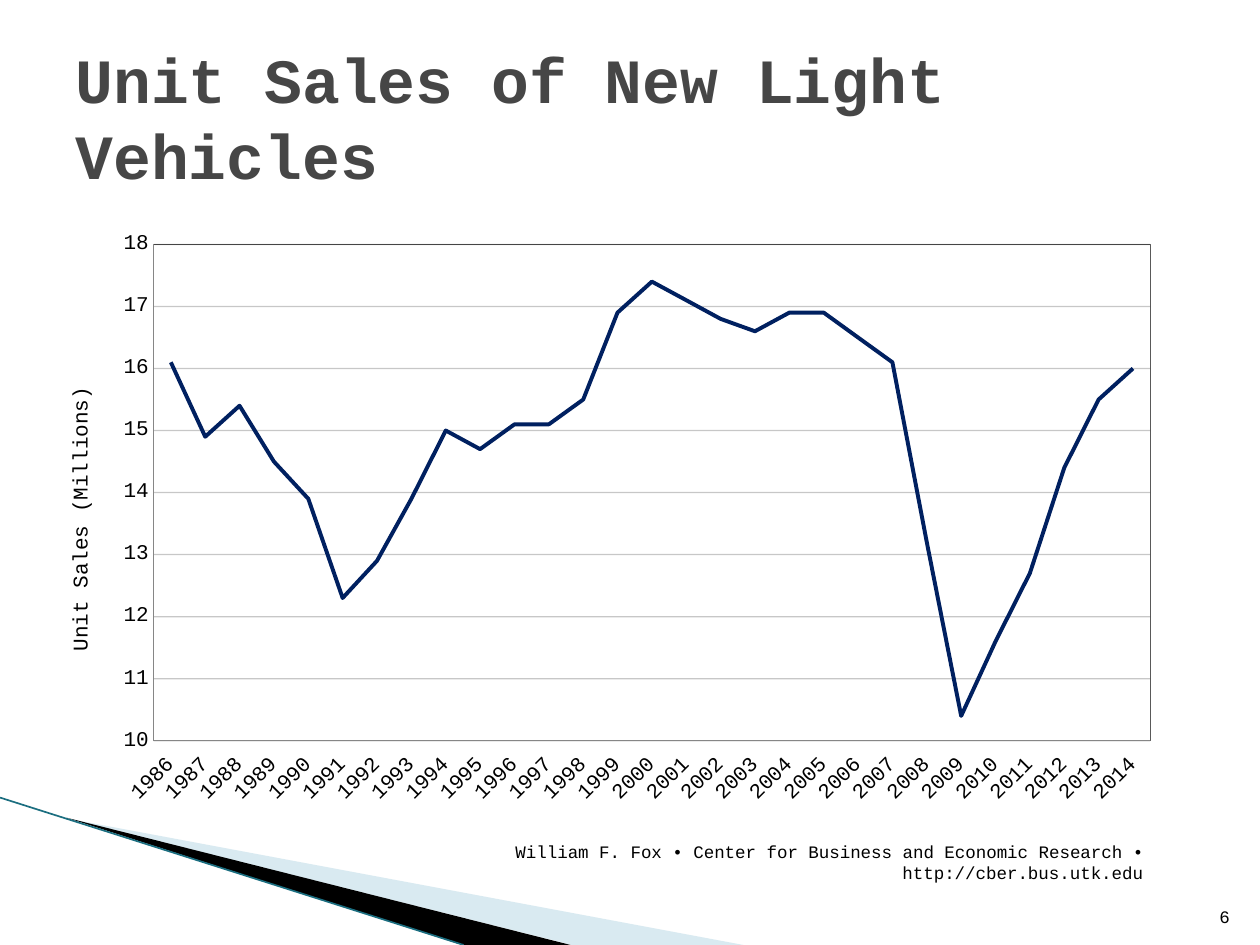
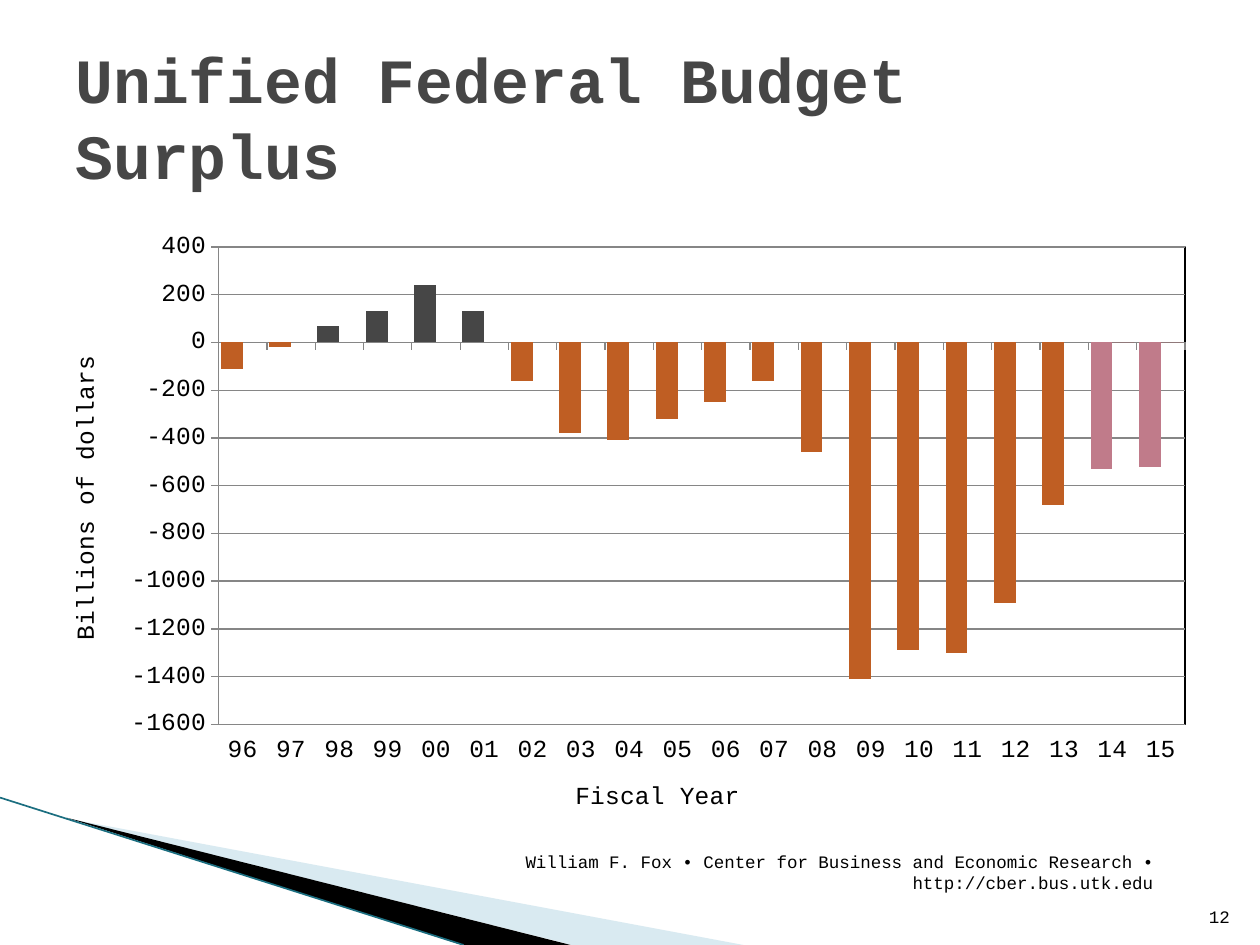
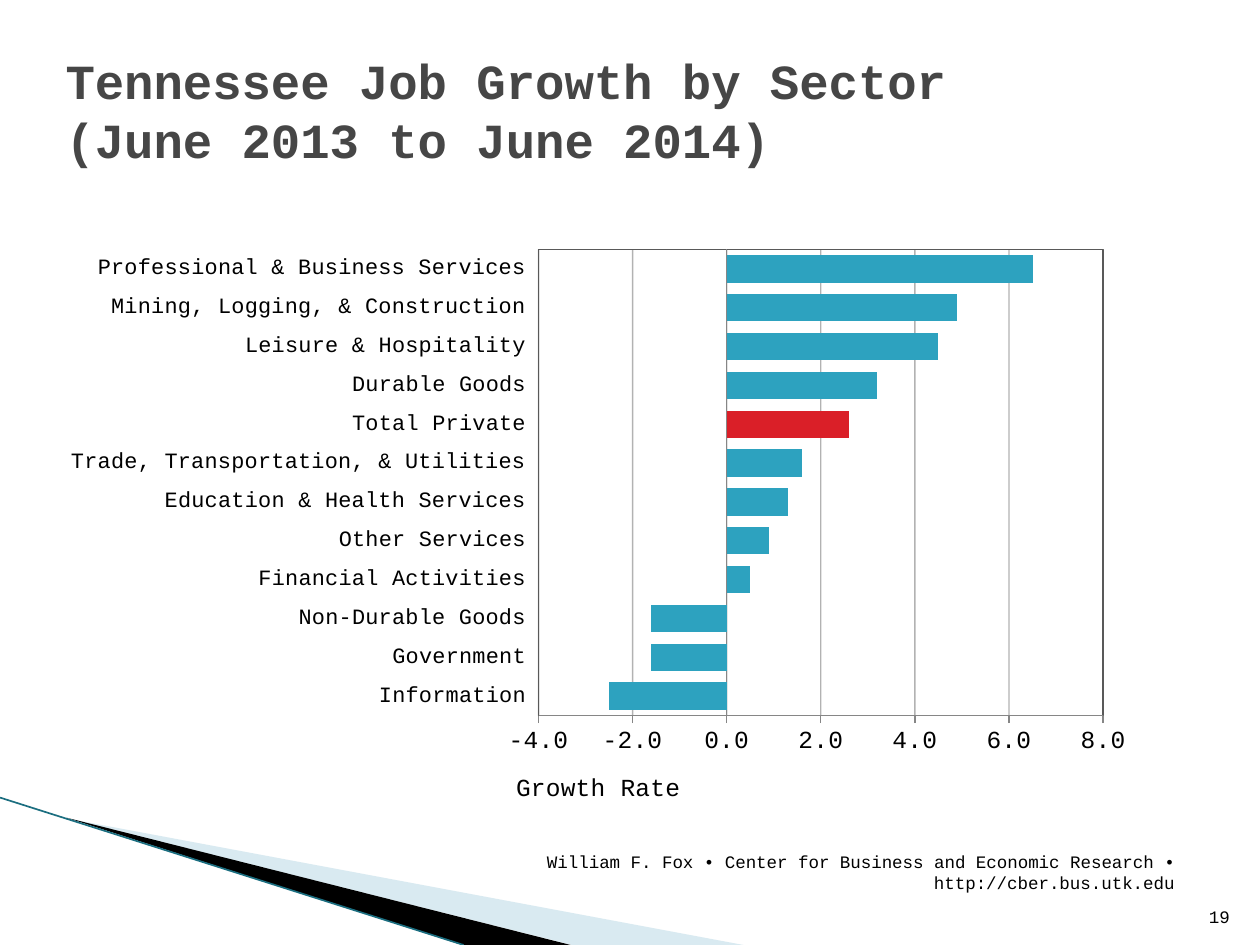
import pptx
import pptx.chart.data
import pptx.dml.color
import pptx.enum.chart
import pptx.enum.shapes
import pptx.enum.text
import pptx.oxml
import pptx.oxml.ns
import pptx.util

COLORS = {
    "text": "000000", "title": "464646", "pale": "A0CBDC", "edge": "1B6E80",
    "axis": "868686", "border": "595959", "navy": "002060", "deficit": "BF5E23",
    "surplus": "464646", "forecast": "C07B8A", "red": "DA1F28", "teal": "2DA2BF",
}
FONT = "Courier New"
CREDIT = "William F. Fox • Center for Business and Economic Research • http://cber.bus.utk.edu"
COLUMNS, ROWS = 100, 75
KINDS = pptx.enum.chart.XL_CHART_TYPE
TICKS = pptx.enum.chart.XL_TICK_MARK
ALIGN = pptx.enum.text.PP_ALIGN
ANCHOR = pptx.enum.text.MSO_ANCHOR


def rgb(name):
    return pptx.dml.color.RGBColor.from_string(COLORS[name])


def element(xml):
    return pptx.oxml.parse_xml(xml.replace(">", " " + pptx.oxml.ns.nsdecls("a", "c") + ">", 1))


def set_opacity(color_elements, percent):
    for color in color_elements:
        color.append(element(f'<a:alpha val="{percent * 1000}"></a:alpha>'))


def manual_layout(**shares):
    entries = "".join(f'<c:{key} val="{value:.4f}"/>' for key, value in shares.items())
    inner = '<c:layoutTarget val="inner"/>' if "w" in shares else ""
    return element(f'<c:manualLayout>{inner}<c:xMode val="edge"/><c:yMode val="edge"/>'
                   f'{entries}</c:manualLayout>')


class Deck:
    """Holds the style and the current slide; lengths are grid columns and rows."""

    def __init__(self):
        self.prs = pptx.Presentation()
        self.prs.slide_width = pptx.util.Inches(10)
        self.prs.slide_height = pptx.util.Inches(7.5)
        self.column = self.prs.slide_width / COLUMNS
        self.row = self.prs.slide_height / ROWS
        self.slide = None

    def place(self, left, top, width, height):
        return (round(left * self.column), round(top * self.row),
                round(width * self.column), round(height * self.row))

    def style_font(self, font, size, color="text", bold=False):
        font.name, font.size, font.bold = FONT, pptx.util.Pt(size), bold
        font.color.rgb = rgb(color)

    def add_slide(self, title, number, credit_at, title_at=(5, 3, 90, 12.5), title_size=36):
        first = self.slide is None
        self.slide = self.prs.slides.add_slide(self.prs.slide_layouts[5])
        if first:
            self.add_sweep()
        heading = self.slide.shapes.title
        heading.left, heading.top, heading.width, heading.height = self.place(*title_at)
        self.fill_text(heading.text_frame, title, title_size, "title", True,
                       ALIGN.LEFT, ANCHOR.MIDDLE)
        self.add_note(CREDIT, credit_at)
        self.add_note(str(number), (94.6, 70.1, 4, 4))

    def fill_text(self, frame, text, size, color, bold, align, anchor):
        frame.text = text
        frame.word_wrap = True
        frame.auto_size = pptx.enum.text.MSO_AUTO_SIZE.NONE
        frame.vertical_anchor = anchor
        for paragraph in frame.paragraphs:
            paragraph.alignment = align
            for run in paragraph.runs:
                self.style_font(run.font, size, color, bold)

    def add_note(self, text, at):
        frame = self.slide.shapes.add_textbox(*self.place(*at)).text_frame
        self.fill_text(frame, text, 10, "text", False, ALIGN.RIGHT, ANCHOR.BOTTOM)

    def add_wedge(self, points, color):
        corners = [self.place(*point, 0, 0)[:2] for point in points]
        builder = self.slide.shapes.build_freeform(*corners[0])
        builder.add_line_segments(corners[1:])
        wedge = builder.convert_to_shape()
        wedge.shadow.inherit = False
        wedge.fill.solid()
        wedge.fill.fore_color.rgb = rgb(color)
        wedge.line.fill.background()
        return wedge

    def add_sweep(self):
        """Put the corner sweep on the master."""
        pale = self.add_wedge([(5.5, 65), (59, 75), (45.4, 75)], "pale")
        set_opacity(pale.element.xpath(".//a:srgbClr"), 40)
        dark = self.add_wedge([(5.3, 64.9), (45.3, 75), (36.7, 75)], "text")
        left, top, right, bottom = self.place(0, 63.3, 36.8, 75)
        edge = self.slide.shapes.add_connector(
            pptx.enum.shapes.MSO_CONNECTOR.STRAIGHT, left, top, right, bottom)
        edge.line.color.rgb = rgb("edge")
        edge.line.width = pptx.util.Pt(0.95)
        edge.element.spPr.append(element("<a:effectLst></a:effectLst>"))
        for part in (pale, dark, edge):
            self.prs.slide_master.element.cSld.spTree.append(part.element)

    def add_chart(self, kind, at, plot_at, categories, series, border="border"):
        data = pptx.chart.data.CategoryChartData()
        data.categories = categories
        for index, (values, _) in enumerate(series, 1):
            data.add_series(f"Series {index}", values)
        chart = self.slide.shapes.add_chart(kind, *self.place(*at), data).chart
        chart.has_legend = chart.has_title = False
        self.style_font(chart.font, 14)
        plot = chart.plots[0]
        plot.vary_by_categories = False
        for line_or_bars, (_, color) in zip(plot.series, series):
            if kind == KINDS.LINE:
                line_or_bars.smooth = False
                line_or_bars.marker.style = pptx.enum.chart.XL_MARKER_STYLE.NONE
                line_or_bars.format.line.color.rgb = rgb(color)
                line_or_bars.format.line.width = pptx.util.Pt(2.25)
            else:
                line_or_bars.invert_if_negative = False
                self.paint(line_or_bars, color)
        area = chart.element.xpath(".//c:plotArea")[0]
        for old in area.xpath("./c:layout"):
            area.remove(old)
        layout = element("<c:layout></c:layout>")
        left, top, width, height = plot_at
        layout.append(manual_layout(x=(left - at[0]) / at[2], y=(top - at[1]) / at[3],
                                    w=width / at[2], h=height / at[3]))
        area.insert(0, layout)
        area.append(element(
            f'<c:spPr><a:noFill/><a:ln w="9525"><a:solidFill><a:srgbClr val="{COLORS[border]}"/>'
            '</a:solidFill></a:ln></c:spPr>'))
        return chart

    def paint(self, target, color):
        target.format.fill.solid()
        target.format.fill.fore_color.rgb = rgb(color)

    def style_axis(self, axis, size, ticks):
        axis.major_tick_mark, axis.minor_tick_mark = ticks, TICKS.NONE
        axis.format.line.color.rgb = rgb("axis")
        axis.format.line.width = pptx.util.Pt(0.75)
        self.style_font(axis.tick_labels.font, size)

    def style_categories(self, chart, size, ticks=TICKS.NONE, angle=0):
        axis = chart.category_axis
        axis.has_major_gridlines = False
        axis.tick_label_position = pptx.enum.chart.XL_TICK_LABEL_POSITION.LOW
        self.style_axis(axis, size, ticks)
        chart.element.xpath(".//c:catAx/c:txPr/a:bodyPr")[0].set("rot", str(angle * 60000))

    def style_values(self, chart, size, scale, number_format, grid, opacity=100,
                     ticks=TICKS.OUTSIDE):
        axis = chart.value_axis
        axis.minimum_scale, axis.maximum_scale, axis.major_unit = scale
        self.style_axis(axis, size, ticks)
        axis.tick_labels.number_format = number_format
        axis.tick_labels.number_format_is_linked = False
        axis.major_gridlines.format.line.color.rgb = rgb(grid)
        axis.major_gridlines.format.line.width = pptx.util.Pt(0.75)
        if opacity < 100:
            set_opacity(chart.element.xpath(".//c:majorGridlines//a:srgbClr"), opacity)

    def title_axis(self, axis, text, size, chart_at, corner, angle=0):
        title = axis.axis_title
        title.text_frame.text = text
        self.style_font(title.text_frame.paragraphs[0].runs[0].font, size)
        title.element.xpath(".//a:bodyPr")[0].set("rot", str(angle * 60000))
        title.element.xpath("./c:layout")[0].append(manual_layout(
            x=(corner[0] - chart_at[0]) / chart_at[2],
            y=(corner[1] - chart_at[1]) / chart_at[3]))


def vehicle_sales(deck):
    deck.add_slide("Unit Sales of New Light Vehicles", 6, (22.5, 66.6, 69.2, 4))
    at = (3.3, 17.5, 89.8, 47.4)
    sales = [16.1, 14.9, 15.4, 14.5, 13.9, 12.3, 12.9, 13.9, 15, 14.7, 15.1, 15.1, 15.5,
             16.9, 17.4, 17.1, 16.8, 16.6, 16.9, 16.9, 16.5, 16.1, 13.2, 10.4, 11.6,
             12.7, 14.4, 15.5, 16]
    years = [str(year) for year in range(1986, 2015)]
    chart = deck.add_chart(KINDS.LINE, at, (12.2, 19.4, 79.1, 39.4), years, [(sales, "navy")])
    deck.style_categories(chart, 12, angle=-45)
    deck.style_values(chart, 12, (10, 18, 1), "#,##0", "text", 21, TICKS.NONE)
    deck.title_axis(chart.value_axis, "Unit Sales (Millions)", 12, at, (5.1, 30.4), -90)


def budget_surplus(deck):
    deck.add_slide("Unified Federal Budget Surplus", 12, (30, 67.4, 62.5, 4))
    at = (3.3, 17.5, 92.5, 49.2)
    balance = [-110, -20, 70, 130, 240, 130, -160, -380, -410, -320, -250, -160, -460,
               -1410, -1290, -1300, -1090, -680, -530, -520]
    years = [f"{year % 100:02}" for year in range(1996, 2016)]
    chart = deck.add_chart(KINDS.COLUMN_CLUSTERED, at, (17.35, 19.6, 76.7, 37.9), years,
                           [(balance, "deficit"), ([None] * 18 + [0, 0], "red")], "text")
    bars = chart.plots[0]
    bars.gap_width, bars.overlap = 21, 0
    for index, value in enumerate(balance):
        if value > 0:
            deck.paint(bars.series[0].points[index], "surplus")
        elif index >= 18:
            deck.paint(bars.series[0].points[index], "forecast")
    deck.style_categories(chart, 14, TICKS.OUTSIDE)
    deck.style_values(chart, 14, (-1600, 400, 200), "General", "axis")
    deck.title_axis(chart.category_axis, "Fiscal Year", 14, at, (45.3, 61.6))
    deck.title_axis(chart.value_axis, "Billions of dollars", 14, at, (5.2, 27.9), -90)


def job_growth(deck):
    deck.add_slide("Tennessee Job Growth by Sector \v(June 2013 to June 2014)", 19,
                   (30, 67.4, 64.2, 4), (4.2, 3.3, 92.5, 10.8), 28)
    at = (3.9, 18.9, 87.2, 47.2)
    growth = {
        "Information": -2.5, "Government": -1.6, "Non-Durable Goods": -1.6,
        "Financial Activities": 0.5, "Other Services": 0.9,
        "Education & Health Services": 1.3, "Trade, Transportation, & Utilities": 1.6,
        "Total Private": 2.6, "Durable Goods": 3.2, "Leisure & Hospitality": 4.5,
        "Mining, Logging, & Construction": 4.9, "Professional & Business Services": 6.5,
    }
    sectors = list(growth)
    chart = deck.add_chart(KINDS.BAR_CLUSTERED, at, (42.75, 19.8, 44.8, 37), sectors,
                           [(list(growth.values()), "teal")])
    bars = chart.plots[0]
    bars.gap_width, bars.overlap = 42, 100
    deck.paint(bars.series[0].points[sectors.index("Total Private")], "red")
    deck.style_categories(chart, 12.5)
    deck.style_values(chart, 14, (-4, 8, 2), "#,##0.0", "border", 45)
    deck.title_axis(chart.value_axis, "Growth Rate", 14, at, (40.6, 61))


def main():
    deck = Deck()
    vehicle_sales(deck)
    budget_surplus(deck)
    job_growth(deck)
    deck.prs.save("out.pptx")


if __name__ == "__main__":
    main()
